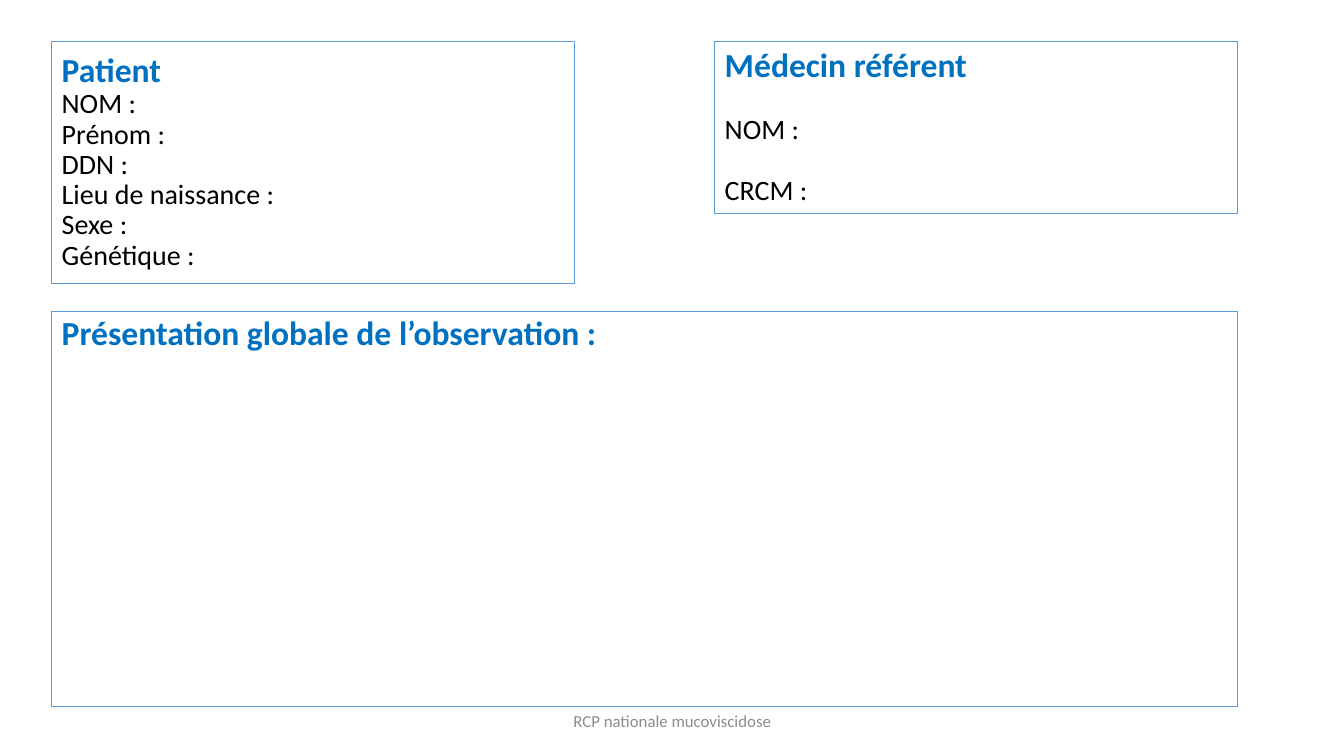
from pptx import Presentation, util as u
from pptx.dml.color import RGBColor
from pptx.enum import text as t
from pptx.oxml.ns import qn
from lxml import etree


def colour(hex_string):
    return RGBColor.from_string(hex_string)


def add_text(frame, content, size=20, color="000000", bold=False,
             align=t.PP_ALIGN.LEFT, spacing=0.9, before=0):
    paragraph = frame.paragraphs[0]
    if paragraph.runs:
        paragraph = frame.add_paragraph()
    paragraph.alignment = align
    paragraph.line_spacing = spacing
    paragraph.space_before = u.Pt(before)
    # No bullet and no hanging indent
    properties = paragraph._p.get_or_add_pPr()
    properties.set("marL", "0")
    properties.set("indent", "0")
    etree.SubElement(properties, qn("a:buNone"))
    run = paragraph.add_run()
    run.text = content
    run.font.name = "Calibri"
    run.font.size = u.Pt(size)
    run.font.bold = bold
    run.font.color.rgb = colour(color)


presentation = Presentation()
presentation.slide_width = u.Cm(33.87)
presentation.slide_height = u.Cm(19.05)
slide = presentation.slides.add_slide(presentation.slide_layouts.get_by_name("Two Content"))
observation, patient, doctor = slide.placeholders

# Framed boxes: position, anchor, heading, gap between lines, lines
left, top, column_width = 1.3, 1.04, 13.18
right_column = 18.01
full_width = right_column + column_width - left
middle, upper = t.MSO_ANCHOR.MIDDLE, t.MSO_ANCHOR.TOP
boxes = [
    (patient, (left, top, column_width, 6.1), middle, "Patient", 0,
     ["NOM :", "Prénom :", "DDN :", "Lieu de naissance :", "Sexe :", "Génétique :"]),
    (doctor, (right_column, top, column_width, 4.34), middle, "Médecin référent", 22,
     ["NOM :", "CRCM :"]),
    (observation, (left, 7.85, full_width, 9.96), upper,
     "Présentation globale de l’observation :", 0, []),
]
for box, position, anchor, heading, gap, lines in boxes:
    box.left, box.top, box.width, box.height = map(u.Cm, position)
    box.line.color.rgb = colour("5B9BD5")
    box.line.width = u.Pt(0.75)
    frame = box.text_frame
    frame.word_wrap = True
    frame.auto_size = t.MSO_AUTO_SIZE.NONE
    frame.vertical_anchor = anchor
    add_text(frame, heading, size=24, color="0070C0", bold=True)
    for line in lines:
        add_text(frame, line, before=gap)

# Footer
footer = slide.shapes.add_textbox(u.Cm(11.23), u.Cm(17.65), u.Cm(11.43), u.Cm(1.02))
footer.text_frame.word_wrap = True
footer.text_frame.vertical_anchor = middle
add_text(footer.text_frame, "RCP nationale mucoviscidose", size=12, color="8C8C8C",
         align=t.PP_ALIGN.CENTER, spacing=1.0)

presentation.save("out.pptx")
